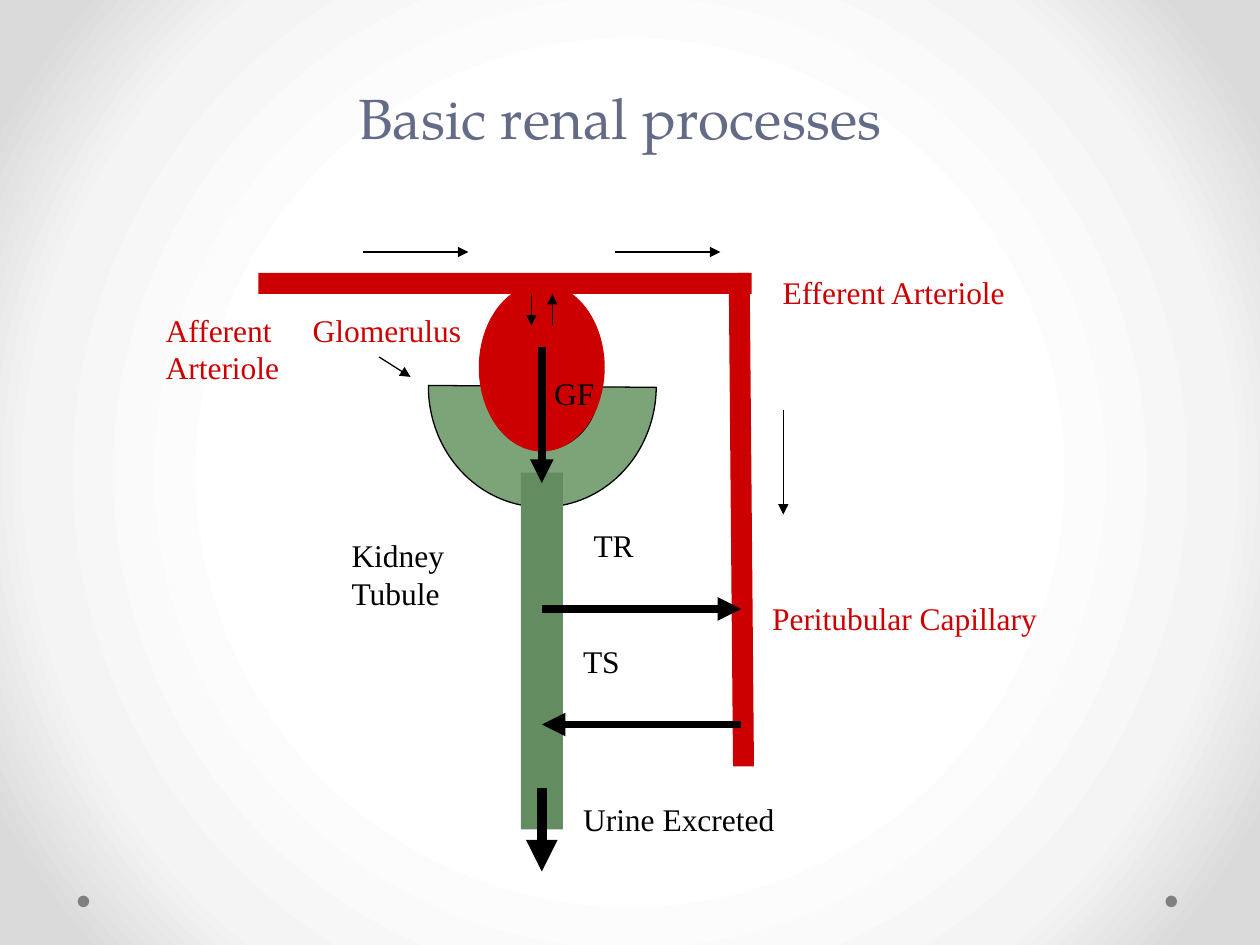
"""Build a slide that diagrams the basic renal processes."""
from lxml import etree
from pptx import Presentation
from pptx.dml.color import RGBColor
from pptx.enum.shapes import MSO_CONNECTOR, MSO_SHAPE
from pptx.enum.text import MSO_ANCHOR, MSO_AUTO_SIZE, PP_ALIGN
from pptx.oxml.ns import qn
from pptx.util import Inches, Pt

RECTANGLE, OVAL, BLOCK_ARC = MSO_SHAPE.RECTANGLE, MSO_SHAPE.OVAL, MSO_SHAPE.BLOCK_ARC
STRAIGHT = MSO_CONNECTOR.STRAIGHT
BOTTOM, CENTER = MSO_ANCHOR.BOTTOM, PP_ALIGN.CENTER
FIT_SHAPE = MSO_AUTO_SIZE.SHAPE_TO_FIT_TEXT

BLACK = RGBColor(0x00, 0x00, 0x00)
BLOOD = RGBColor(0xCC, 0x00, 0x00)
CAPSULE = RGBColor(0x7D, 0xA3, 0x79)
TUBULE = RGBColor(0x64, 0x8C, 0x61)
SLATE = RGBColor(0x64, 0x6B, 0x86)
GRAY = RGBColor(0x80, 0x80, 0x80)
BACKDROP = [(50, "FFFFFF"), (76, "F4F4F4"), (92, "DADADA")]

TITLE = "Basic renal processes"
TITLE_FONT = {"name": "TeX Gyre Pagella", "size": Pt(32.4)}
LABEL_FONT = {"name": "Times New Roman", "size": Pt(18)}

# Columns count from the tubule axis and rows from the slide top, 12 to the inch.
GRID = 12
AXIS = 4.3

ANATOMY = [
    (BLOCK_ARC, -10.8, 25.3, 21.7, 23, 180.5, CAPSULE, BLACK),
    (RECTANGLE, -2, 45, 4, 34, 0, TUBULE, None),
    (OVAL, -6, 27, 12, 16, 0, BLOOD, None),
    (RECTANGLE, -27, 26, 47, 2, 0, BLOOD, None),
    (RECTANGLE, -4.5, 48.5, 47, 2, 89.5, BLOOD, None),
]
CORNER_DOTS = [(-44.2, 85.3), (59.4, 85.3)]
DOT_SIZE = 1.1

FLOWS = [
    ((0, 58), (19, 58), 4.5),
    ((19, 69), (0, 69), 4.5),
    ((0, 75), (0, 83), 6),
    ((0, 33), (0, 46), 4.5),
    ((-17, 24), (-7, 24), 0.75),
    ((7, 24), (17, 24), 0.75),
    ((23, 39), (23, 49), 0.75),
    ((-1, 28), (-1, 31), 0.75),
    ((1, 31), (1, 28), 0.75),
    ((-15.5, 34), (-12.5, 35.9), 0.75),
]
LABELS = [
    (["GF"], 0, 35, 7.5, BLACK),
    (["TR"], 3.75, 49.5, 7.5, BLACK),
    (["TS"], 2.75, 60.6, 6, BLACK),
    (["Urine Excreted"], 2.75, 75.6, 26.8, BLACK),
    (["Efferent Arteriole"], 21.75, 25.4, 23.9, BLOOD),
    (["Afferent", "Arteriole"], -37, 29, 13.2, BLOOD),
    (["Glomerulus"], -23, 29, 18.2, BLOOD),
    (["Kidney", "Tubule"], -19.3, 50.5, 11.3, BLACK),
    (["Peritubular Capillary"], 20.75, 56.5, 27.7, BLOOD),
]
LINE_ROWS = 3.6
INSET_ROWS = 1.2


def across(column):
    return Inches(AXIS + column / GRID)


def span(cells):
    return Inches(cells / GRID)


def paint_backdrop(slide):
    fill = slide.background.fill
    fill.gradient()
    gradient = slide.background._cSld.find(".//" + qn("a:gradFill"))
    for child in list(gradient):
        gradient.remove(child)
    stops = etree.SubElement(gradient, qn("a:gsLst"))
    for percent, color in BACKDROP:
        stop = etree.SubElement(stops, qn("a:gs"), pos=str(percent * 1000))
        etree.SubElement(stop, qn("a:srgbClr"), val=color)
    circle = etree.SubElement(gradient, qn("a:path"), {"path": "circle"})
    center = dict.fromkeys("ltrb", "50000")
    etree.SubElement(circle, qn("a:fillToRect"), center)


def add_part(slide, kind, column, row, width, height, turn, color, outline):
    part = slide.shapes.add_shape(kind, across(column), span(row), span(width), span(height))
    part.shadow.inherit = False
    part.rotation = turn
    part.fill.solid()
    part.fill.fore_color.rgb = color
    if outline is None:
        part.line.fill.background()
    else:
        part.line.color.rgb = outline
        part.line.width = Pt(0.75)


def add_flow(slide, start, end, weight):
    flow = slide.shapes.add_connector(
        STRAIGHT, across(start[0]), span(start[1]), across(end[0]), span(end[1]))
    flow.line.color.rgb = BLACK
    flow.line.width = Pt(weight)
    etree.SubElement(flow.line._get_or_add_ln(), qn("a:tailEnd"), type="triangle")
    etree.SubElement(flow._element.spPr, qn("a:effectLst"))


def write(paragraph, text, font, color):
    paragraph.text = text
    for attribute, value in font.items():
        setattr(paragraph.font, attribute, value)
    paragraph.font.color.rgb = color


def add_label(slide, lines, column, row, width, color):
    height = span(LINE_ROWS * len(lines) + INSET_ROWS)
    frame = slide.shapes.add_textbox(across(column), span(row), span(width), height).text_frame
    frame.word_wrap = False
    frame.auto_size = FIT_SHAPE
    for index, line in enumerate(lines):
        paragraph = frame.add_paragraph() if index else frame.paragraphs[0]
        write(paragraph, line, LABEL_FONT, color)


def add_title(slide):
    frame = slide.shapes.add_textbox(Inches(0.42), Inches(0.58), Inches(9), Inches(0.67)).text_frame
    frame.word_wrap = True
    frame.vertical_anchor = BOTTOM
    heading = frame.paragraphs[0]
    heading.alignment = CENTER
    heading.line_spacing = Pt(58)
    write(heading, TITLE, TITLE_FONT, SLATE)


def main():
    deck = Presentation()
    deck.slide_width, deck.slide_height = Inches(10), Inches(7.5)
    slide = deck.slides.add_slide(deck.slide_layouts[6])
    paint_backdrop(slide)
    for column, row in CORNER_DOTS:
        add_part(slide, OVAL, column, row, DOT_SIZE, DOT_SIZE, 0, GRAY, None)
    add_title(slide)
    for part in ANATOMY:
        add_part(slide, *part)
    for flow in FLOWS:
        add_flow(slide, *flow)
    for label in LABELS:
        add_label(slide, *label)
    deck.save("out.pptx")


if __name__ == "__main__":
    main()
